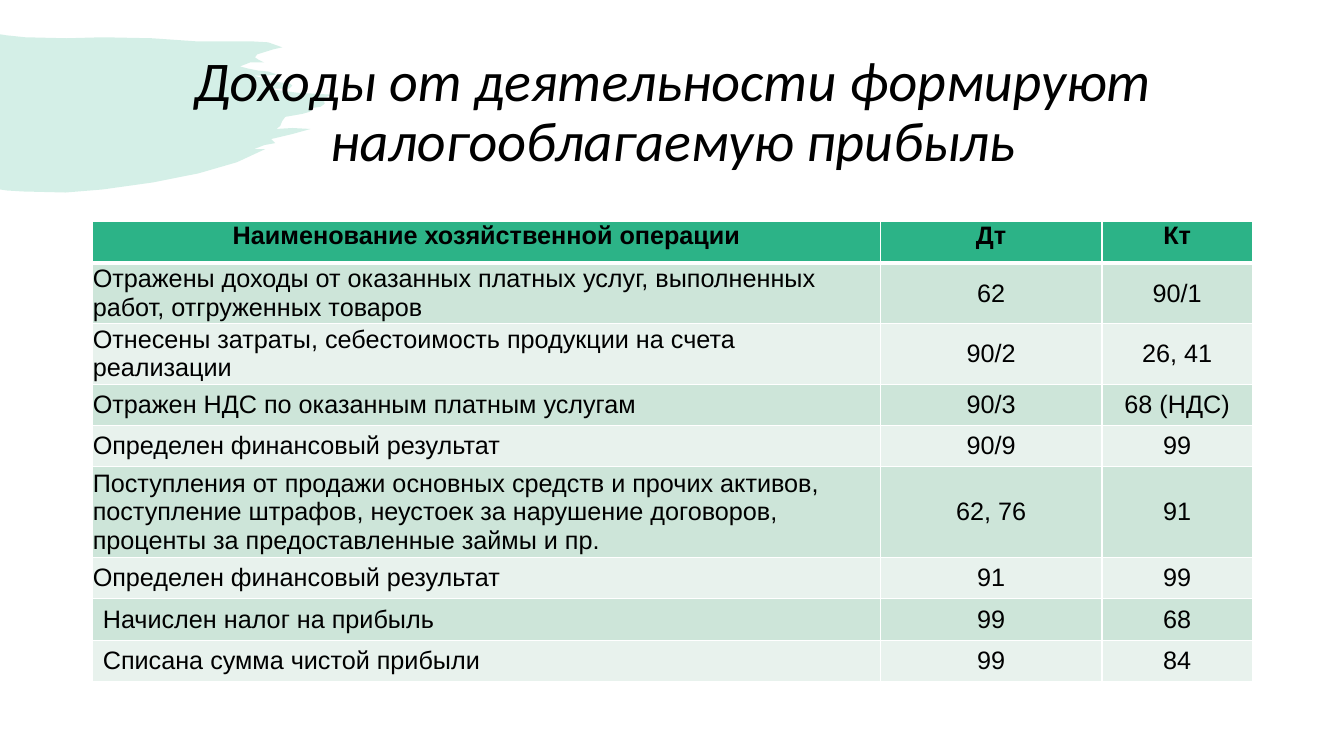
"""Build a slide with a table of accounting entries that form taxable profit."""
from lxml import etree
from pptx import Presentation
from pptx.dml.color import RGBColor
from pptx.enum.text import MSO_ANCHOR, PP_ALIGN
from pptx.oxml.ns import qn
from pptx.util import Inches, Pt

LEFT, CENTER = PP_ALIGN.LEFT, PP_ALIGN.CENTER
TOP, MIDDLE = MSO_ANCHOR.TOP, MSO_ANCHOR.MIDDLE

TITLE = "Доходы от деятельности формируют налогооблагаемую прибыль"
HEADER = ("Наименование хозяйственной операции", "Дт", "Кт")
ENTRIES = [
    ("Отражены доходы от оказанных платных услуг, выполненных работ, отгруженных товаров", "62", "90/1"),
    ("Отнесены затраты, себестоимость продукции на счета реализации", "90/2", "26, 41"),
    ("Отражен НДС по оказанным платным услугам", "90/3", "68 (НДС)"),
    ("Определен финансовый результат", "90/9", "99"),
    ("Поступления от продажи основных средств и прочих активов, поступление штрафов, "
     "неустоек за нарушение договоров, проценты за предоставленные займы и пр.", "62, 76", "91"),
    ("Определен финансовый результат", "91", "99"),
    ("Начислен налог на прибыль", "99", "68"),
    ("Списана сумма чистой прибыли", "99", "84"),
]
COL_WIDTHS = (7.81, 2.2, 1.49)
ROW_HEIGHT = 0.41
TALL_ROWS = {1: 0.56, 2: 0.56, 5: 0.84}
FIRST_PADDED_ROW = 7
BRUSH = [
    (0, 0.34), (0.06, 0.35), (0.25, 0.37), (0.66, 0.38), (1.02, 0.37), (1.51, 0.38),
    (1.94, 0.41), (2.48, 0.41), (2.66, 0.42), (2.8, 0.47), (2.71, 0.49), (2.55, 0.54),
    (2.53, 0.57), (2.56, 0.59), (2.62, 0.62), (2.48, 0.62), (2.38, 0.66), (2.46, 0.68),
    (2.56, 0.7), (2.66, 0.71), (2.75, 0.74), (2.63, 0.75), (2.51, 0.75), (2.63, 0.78),
    (2.73, 0.81), (2.8, 0.82), (2.88, 0.83), (2.9, 0.85), (2.87, 0.88), (2.84, 0.88),
    (2.63, 0.88), (2.95, 0.92), (3.3, 0.94), (3.21, 0.97), (3.22, 1.03), (3.18, 1.06),
    (3.11, 1.07), (3.07, 1.11), (3, 1.13), (2.83, 1.16), (2.8, 1.2), (2.78, 1.25),
    (2.74, 1.28), (2.9, 1.27), (3.08, 1.28), (2.9, 1.33), (2.69, 1.38), (2.73, 1.42),
    (2.62, 1.44), (2.52, 1.48), (2.63, 1.48), (2.35, 1.61), (1.97, 1.72), (1.52, 1.81),
    (1.02, 1.88), (0.65, 1.91), (0.23, 1.9), (0.07, 1.89), (0, 1.88),
]
THEME = {
    "green": "2CB387", "band": ("CDE5D9", "E8F2ED"), "line": "FFFFFF", "text": "000000",
    "title_font": "Calibri", "table_font": "Arial", "title_size": 40, "table_size": 18,
    "brush_alpha": 20,
}


def rgb(name):
    return RGBColor.from_string(name)


def add_run(p, text, font, size, bold=False, italic=False):
    r = p.add_run()
    r.text = text
    r.font.name, r.font.size = font, Pt(size)
    r.font.bold, r.font.italic = bold, italic
    r.font.color.rgb = rgb(THEME["text"])


def add_brush(s):
    first, *rest = [(Inches(x), Inches(y)) for x, y in BRUSH]
    builder = s.shapes.build_freeform(*first)
    builder.add_line_segments(rest, close=True)
    sp = builder.convert_to_shape()
    sp.shadow.inherit = False
    sp.line.fill.background()
    sp.fill.solid()
    sp.fill.fore_color.rgb = rgb(THEME["green"])
    color = sp.element.spPr.find(qn("a:solidFill"))[0]
    etree.SubElement(color, qn("a:alpha"), val=str(THEME["brush_alpha"] * 1000))


def add_title(s):
    sp = s.shapes.add_textbox(Inches(0.92), Inches(0.4), Inches(11.5), Inches(1.45))
    tf = sp.text_frame
    tf.word_wrap = True
    tf.vertical_anchor = MIDDLE
    p = tf.paragraphs[0]
    p.alignment, p.line_spacing = CENTER, 0.9
    add_run(p, TITLE, THEME["title_font"], THEME["title_size"], italic=True)


def set_borders(cell, row):
    widths = {"L": 1, "R": 1, "T": 3 if row == 1 else 1, "B": 3 if row == 0 else 1}
    tcPr = cell._tc.get_or_add_tcPr()
    for i, (side, width) in enumerate(widths.items()):
        ln = etree.Element(qn(f"a:ln{side}"), w=str(Pt(width)))
        fill = etree.SubElement(ln, qn("a:solidFill"))
        etree.SubElement(fill, qn("a:srgbClr"), val=THEME["line"])
        tcPr.insert(i, ln)


def fill_cell(cell, row, col, text):
    header = row == 0
    pad_x, pad_y = (0.1, 0.05) if row >= FIRST_PADDED_ROW else (0, 0)
    cell.margin_left = cell.margin_right = Inches(pad_x)
    cell.margin_top = cell.margin_bottom = Inches(pad_y)
    cell.vertical_anchor = TOP if header else MIDDLE
    cell.fill.solid()
    cell.fill.fore_color.rgb = rgb(THEME["green"] if header else THEME["band"][(row - 1) % 2])
    p = cell.text_frame.paragraphs[0]
    p.alignment = CENTER if header or col else LEFT
    add_run(p, text, THEME["table_font"], THEME["table_size"], bold=header)
    set_borders(cell, row)


def add_entries(s):
    rows = [HEADER, *ENTRIES]
    heights = [TALL_ROWS.get(i, ROW_HEIGHT) for i in range(len(rows))]
    table = s.shapes.add_table(len(rows), len(HEADER), Inches(0.92), Inches(2.2),
                               Inches(sum(COL_WIDTHS)), Inches(sum(heights))).table
    for column, width in zip(table.columns, COL_WIDTHS):
        column.width = Inches(width)
    for i, (height, texts) in enumerate(zip(heights, rows)):
        table.rows[i].height = Inches(height)
        for j, text in enumerate(texts):
            fill_cell(table.cell(i, j), i, j, text)


def main():
    prs = Presentation()
    prs.slide_width, prs.slide_height = Inches(13.33), Inches(7.5)
    s = prs.slides.add_slide(prs.slide_layouts[6])
    add_brush(s)
    add_title(s)
    add_entries(s)
    prs.save("out.pptx")


if __name__ == "__main__":
    main()
